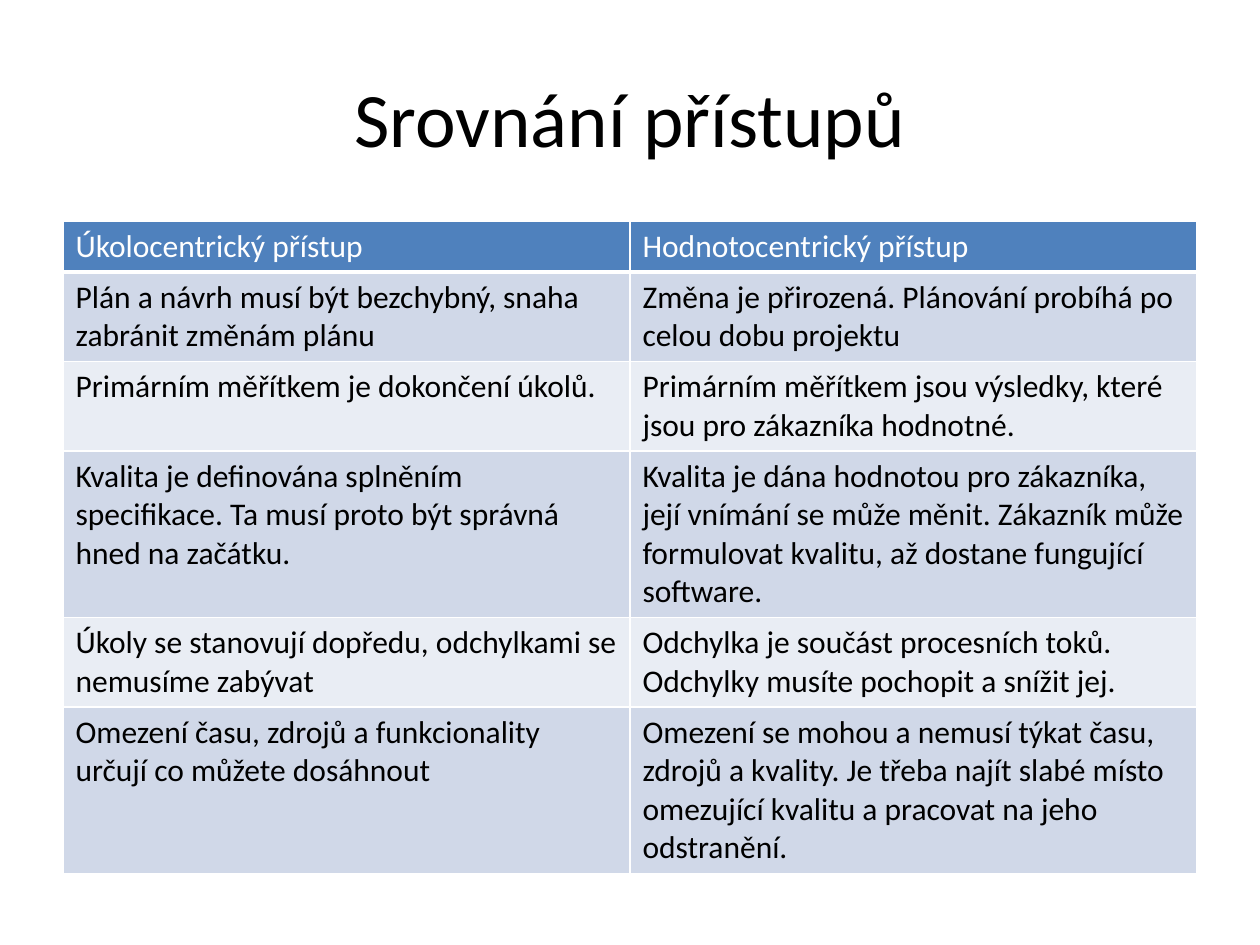
from lxml import etree
from pptx import Presentation
from pptx.dml.color import RGBColor
from pptx.enum.text import MSO_ANCHOR, PP_ALIGN
from pptx.oxml.ns import qn
from pptx.util import Emu, Pt

CENTER = PP_ALIGN.CENTER
LEFT = PP_ALIGN.LEFT
MIDDLE = MSO_ANCHOR.MIDDLE
TOP = MSO_ANCHOR.TOP
TITLE_ONLY = 5
PX = 914400 // 126

COLORS = {
    "text": "000000",
    "header_text": "FFFFFF",
    "border": "FFFFFF",
    "header": "4F81BD",
    "odd_row": "D0D8E8",
    "even_row": "E9EDF4",
}

HEADINGS = ("Úkolocentrický přístup", "Hodnotocentrický přístup")
COMPARISON = [
    ("Plán a návrh musí být bezchybný, snaha zabránit změnám plánu",
     "Změna je přirozená. Plánování probíhá po celou dobu projektu"),
    ("Primárním měřítkem je dokončení úkolů.",
     "Primárním měřítkem jsou výsledky, které jsou pro zákazníka hodnotné."),
    ("Kvalita je definována splněním specifikace. Ta musí proto být správná hned na začátku.",
     "Kvalita je dána hodnotou pro zákazníka, její vnímání se může měnit. "
     "Zákazník může formulovat kvalitu, až dostane fungující software."),
    ("Úkoly se stanovují dopředu, odchylkami se nemusíme zabývat",
     "Odchylka je součást procesních toků. Odchylky musíte pochopit a snížit jej."),
    ("Omezení času, zdrojů a funkcionality určují co můžete dosáhnout",
     "Omezení se mohou a nemusí týkat času, zdrojů a kvality. "
     "Je třeba najít slabé místo omezující kvalitu a pracovat na jeho odstranění."),
]


def px(length):
    return Emu(length * PX)


def color(name):
    return RGBColor.from_string(COLORS[name])


def write(frame, text, size=18, fill="text", align=LEFT):
    para = frame.paragraphs[0]
    para.alignment = align
    span = para.add_run()
    span.text = text
    span.font.name = "Calibri"
    span.font.size = Pt(size)
    span.font.bold = False
    span.font.color.rgb = color(fill)


def add_borders(cell, bottom=1):
    properties = cell._tc.get_or_add_tcPr()
    for side, width in (("L", 1), ("R", 1), ("T", 1), ("B", bottom)):
        line = etree.SubElement(properties, qn(f"a:ln{side}"), w=str(Pt(width)))
        solid = etree.SubElement(line, qn("a:solidFill"))
        etree.SubElement(solid, qn("a:srgbClr"), val=COLORS["border"])


class SlideBuilder:
    def __init__(self, deck):
        self.page = deck.slides.add_slide(deck.slide_layouts[TITLE_ONLY])

    def title(self, text, left, top, width, height):
        box = self.page.shapes.title
        box.left, box.top = px(left), px(top)
        box.width, box.height = px(width), px(height)
        box.text_frame.vertical_anchor = MIDDLE
        write(box.text_frame, text, size=44, align=CENTER)

    def table(self, headings, rows, left, top, width, row_height):
        lines = [headings, *rows]
        table = self.page.shapes.add_table(
            len(lines), len(headings), px(left), px(top),
            px(width), px(row_height * len(lines))).table
        for row_index, texts in enumerate(lines):
            is_header = row_index == 0
            band = "odd_row" if row_index % 2 else "even_row"
            for column_index, text in enumerate(texts):
                cell = table.cell(row_index, column_index)
                add_borders(cell, bottom=3 if is_header else 1)
                cell.fill.solid()
                cell.fill.fore_color.rgb = color("header" if is_header else band)
                cell.vertical_anchor = TOP
                write(cell.text_frame, text, fill="header_text" if is_header else "text")


def main():
    deck = Presentation()
    deck.slide_width, deck.slide_height = px(1260), px(945)
    slide = SlideBuilder(deck)
    slide.title("Srovnání přístupů", 63, 38, 1134, 158)
    slide.table(HEADINGS, COMPARISON, 63, 221, 1134, 51)
    deck.save("out.pptx")


if __name__ == "__main__":
    main()
